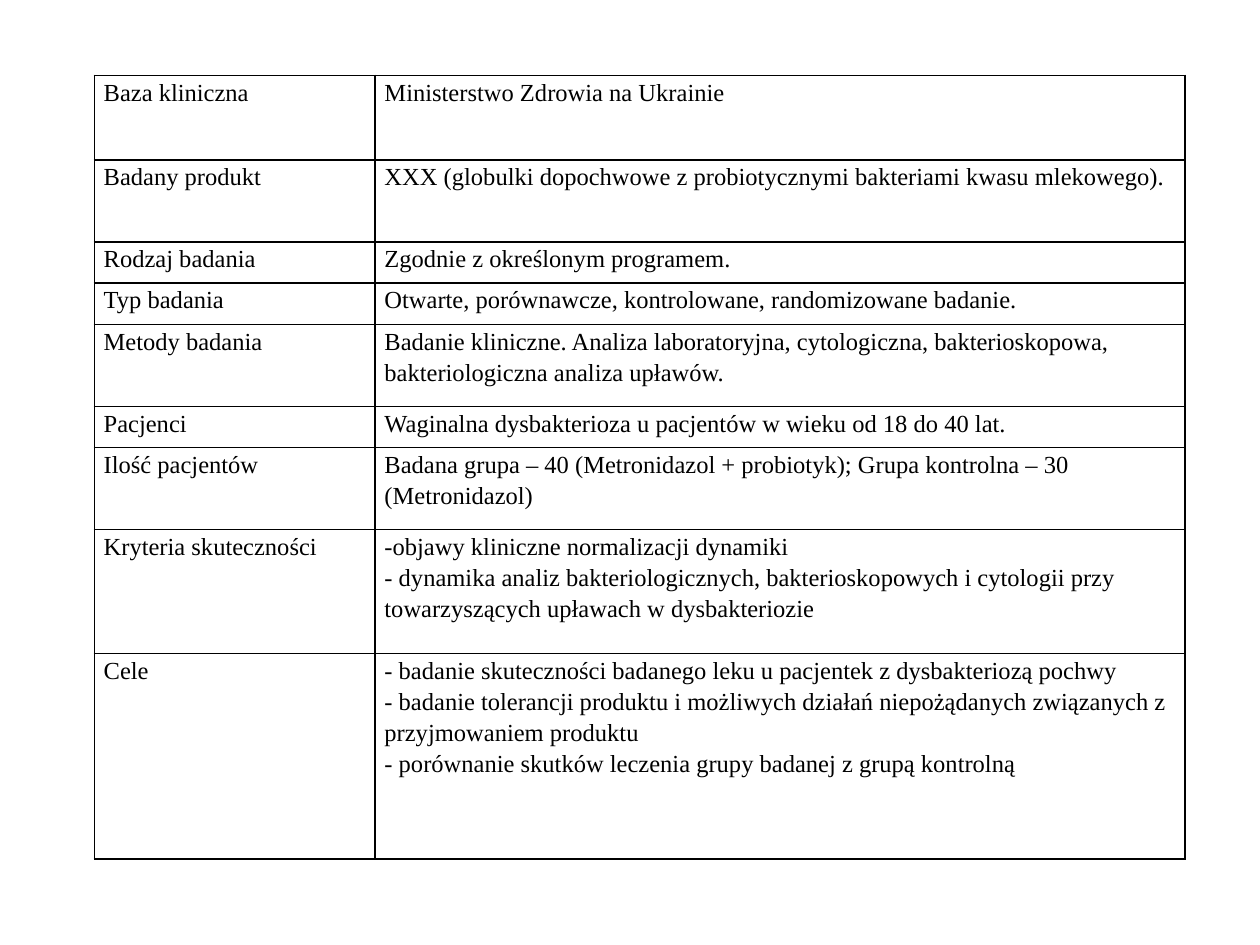
import pptx
import pptx.util
import pptx.dml.color
import lxml.etree
from pptx.oxml.ns import qn

Cm, Pt = pptx.util.Cm, pptx.util.Pt
HUES = {"ink": "000000"}
FONT = "Times New Roman"
COLS = [5.66, 16.33]
# Each row: height in cm, label, lines of the description
ROWS = [
    (1.7, "Baza kliniczna", ["Ministerstwo Zdrowia na Ukrainie"]),
    (1.65, "Badany produkt",
     ["XXX (globulki dopochwowe z probiotycznymi bakteriami kwasu mlekowego)."]),
    (0.83, "Rodzaj badania", ["Zgodnie z określonym programem."]),
    (0.83, "Typ badania",
     ["Otwarte, porównawcze, kontrolowane, randomizowane badanie."]),
    (1.65, "Metody badania",
     ["Badanie kliniczne. Analiza laboratoryjna, cytologiczna, "
      "bakterioskopowa, bakteriologiczna analiza upławów."]),
    (0.83, "Pacjenci",
     ["Waginalna dysbakterioza u pacjentów w wieku od 18 do 40 lat."]),
    (1.65, "Ilość pacjentów",
     ["Badana grupa – 40 (Metronidazol + probiotyk); "
      "Grupa kontrolna – 30 (Metronidazol)"]),
    (2.49, "Kryteria skuteczności",
     ["-objawy kliniczne normalizacji dynamiki",
      "- dynamika analiz bakteriologicznych, bakterioskopowych i cytologii "
      "przy towarzyszących upławach w dysbakteriozie"]),
    (4.14, "Cele",
     ["- badanie skuteczności badanego leku u pacjentek z dysbakteriozą pochwy",
      "- badanie tolerancji produktu i możliwych działań niepożądanych "
      "związanych z przyjmowaniem produktu",
      "- porównanie skutków leczenia grupy badanej z grupą kontrolną"]),
]


def add_rules(cell):
    """Draw a thin line on all four sides of the cell."""
    props = cell._tc.get_or_add_tcPr()
    for side in ("lnL", "lnR", "lnT", "lnB"):
        line = lxml.etree.SubElement(props, qn("a:" + side), w=str(Pt(1)))
        fill = lxml.etree.SubElement(line, qn("a:solidFill"))
        lxml.etree.SubElement(fill, qn("a:srgbClr"), val=HUES["ink"])


def fill_cell(cell, lines):
    add_rules(cell)
    cell.fill.background()
    cell.margin_left = cell.margin_right = Cm(0.19)
    cell.margin_top = cell.margin_bottom = 0
    cell.text_frame.text = "\n".join(lines)
    for para in cell.text_frame.paragraphs:
        para.line_spacing = 1.15
        for run in para.runs:
            run.font.name = FONT
            run.font.size = Pt(14)
            run.font.color.rgb = pptx.dml.color.RGBColor.from_string(HUES["ink"])


def add_grid(slide, left, top, width, height):
    """Place the study table in the given box, scaled to its size in cm."""
    grid = slide.shapes.add_table(
        len(ROWS), len(COLS), Cm(left), Cm(top), Cm(width), Cm(height)).table
    grid.first_row = grid.horz_banding = False
    for col, size in zip(grid.columns, COLS):
        col.width = Cm(width * size / sum(COLS))
    total = sum(row[0] for row in ROWS)
    for row, (size, label, lines) in zip(grid.rows, ROWS):
        row.height = Cm(height * size / total)
        fill_cell(row.cells[0], [label])
        fill_cell(row.cells[1], lines)


def main():
    deck = pptx.Presentation()
    deck.slide_width, deck.slide_height = Cm(25.4), Cm(19.05)
    slide = deck.slides.add_slide(deck.slide_layouts[6])
    add_grid(slide, 1.9, 1.52, 21.99, 15.8)
    deck.save("out.pptx")


if __name__ == "__main__":
    main()
